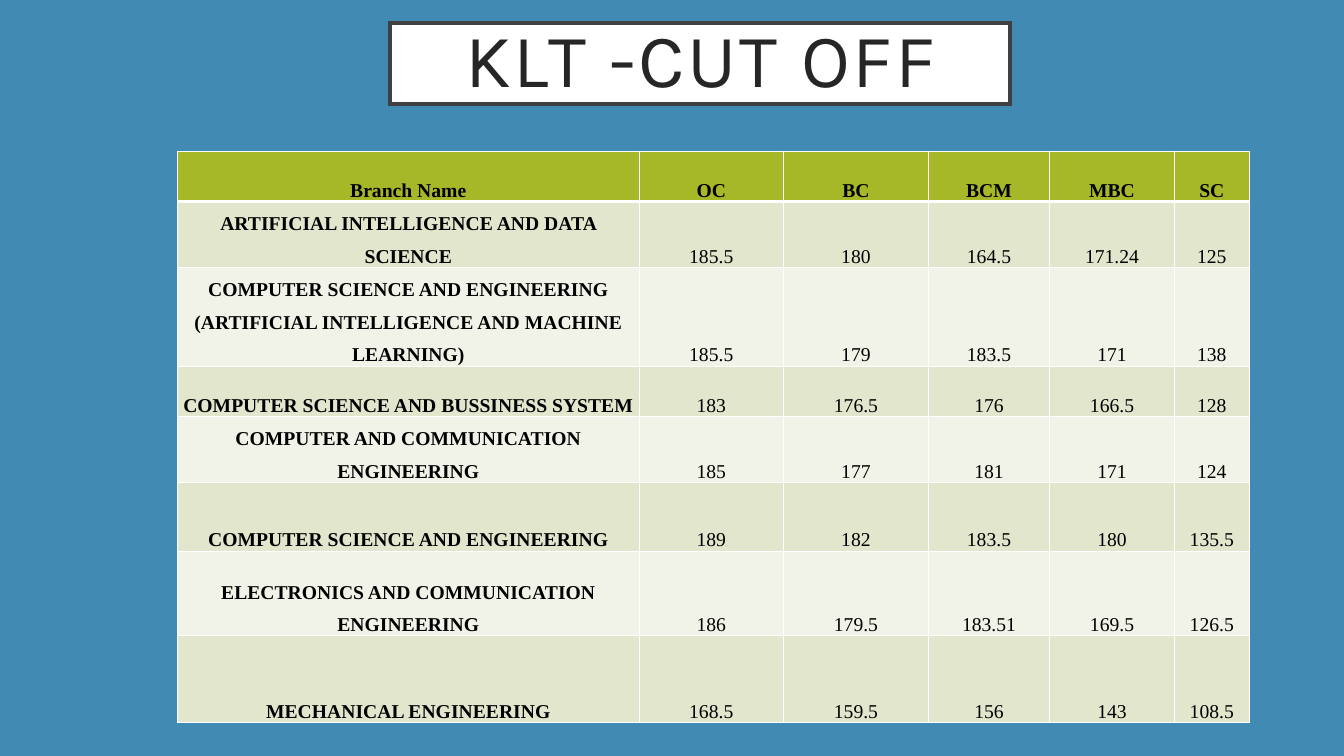
from lxml import etree
from pptx import Presentation
from pptx import util as u
from pptx.dml.color import RGBColor
from pptx.enum import text
from pptx.oxml.ns import qn

COLORS = {
    "background": "418AB3", "white": "FFFFFF", "frame": "404040", "title": "262626",
    "header": "A6B727", "odd": "E1E6CD", "even": "F1F3E8", "text": "000000",
}
WIDTH, HEIGHT = 13.33, 7.5
TITLE_BOX = (3.87, 0.23, 6.15, 0.8)
TABLE_BOX = (1.76, 1.5, 10.63, 5.65)
COLUMN_WIDTHS = (4.58, 1.43, 1.44, 1.2, 1.24, 0.74)
ROW_HEIGHTS = (0.5, 0.65, 0.97, 0.5, 0.65, 0.68, 0.84, 0.86)
CUT_OFFS = (
    ("Branch Name", "OC", "BC", "BCM", "MBC", "SC"),
    ("ARTIFICIAL INTELLIGENCE AND DATA SCIENCE", "185.5", "180", "164.5", "171.24", "125"),
    ("COMPUTER SCIENCE AND ENGINEERING (ARTIFICIAL INTELLIGENCE AND MACHINE LEARNING)",
     "185.5", "179", "183.5", "171", "138"),
    ("COMPUTER SCIENCE AND BUSSINESS SYSTEM", "183", "176.5", "176", "166.5", "128"),
    ("COMPUTER AND COMMUNICATION ENGINEERING", "185", "177", "181", "171", "124"),
    ("COMPUTER SCIENCE AND ENGINEERING", "189", "182", "183.5", "180", "135.5"),
    ("ELECTRONICS AND COMMUNICATION ENGINEERING", "186", "179.5", "183.51", "169.5", "126.5"),
    ("MECHANICAL ENGINEERING", "168.5", "159.5", "156", "143", "108.5"),
)


def color(name):
    """Return the named palette colour."""
    return RGBColor.from_string(COLORS[name])


def paint(fill, name):
    """Make a fill solid in a palette colour."""
    fill.solid()
    fill.fore_color.rgb = color(name)


def set_font(span, face, size, name, bold=False):
    """Format one run of text."""
    span.font.name = face
    span.font.size = u.Pt(size)
    span.font.bold = bold
    span.font.color.rgb = color(name)


def set_margins(frame, left, top, right, bottom):
    """Set the inner margins of a cell or text frame in inches."""
    frame.margin_left, frame.margin_top = u.Inches(left), u.Inches(top)
    frame.margin_right, frame.margin_bottom = u.Inches(right), u.Inches(bottom)


def set_borders(cell, top, bottom):
    """Draw white cell borders, with the given top and bottom widths in points."""
    properties = cell._tc.get_or_add_tcPr()
    sides = (("a:lnL", 1), ("a:lnR", 1), ("a:lnT", top), ("a:lnB", bottom))
    for index, (tag, points) in enumerate(sides):
        line = etree.Element(qn(tag), w=str(u.Pt(points)))
        solid = etree.SubElement(line, qn("a:solidFill"))
        etree.SubElement(solid, qn("a:srgbClr"), val=COLORS["white"])
        properties.insert(index, line)


def add_title(page, box):
    """Place the framed title in its box."""
    title = page.shapes.title
    title.left, title.top, title.width, title.height = map(u.Inches, box)
    paint(title.fill, "white")
    title.line.color.rgb = color("frame")
    title.line.width = u.Pt(3)
    etree.SubElement(title.line._get_or_add_ln(), qn("a:miter"), lim="800000")
    frame = title.text_frame
    frame.text = "KLT -CUT OFF"
    frame.word_wrap = True
    frame.auto_size = text.MSO_AUTO_SIZE.NONE
    frame.vertical_anchor = text.MSO_ANCHOR.MIDDLE
    set_margins(frame, 0.3, 0.2, 0.3, 0.2)
    para = frame.paragraphs[0]
    para.alignment = text.PP_ALIGN.CENTER
    para.line_spacing = 0.9
    span = para.runs[0]
    set_font(span, "Karla", 54, "title")
    span.font._element.set("spc", "200")


def fill_cell(cell, value, row, column):
    """Write and format one table cell."""
    cell.text = value
    cell.vertical_anchor = text.MSO_ANCHOR.BOTTOM
    set_margins(cell, 0.01, 0.01, 0.01, 0)
    paint(cell.fill, "header" if row == 0 else "odd" if row % 2 else "even")
    set_borders(cell, 3 if row == 1 else 1, 3 if row == 0 else 1)
    para = cell.text_frame.paragraphs[0]
    para.alignment = text.PP_ALIGN.CENTER
    if row and column == 0:
        para.line_spacing = 1.5
    set_font(para.runs[0], "Times New Roman", 14, "text", row == 0 or column == 0)


def add_cut_off_table(page, box):
    """Place the cut-off table in its box."""
    size = len(CUT_OFFS), len(COLUMN_WIDTHS)
    table = page.shapes.add_table(*size, *map(u.Inches, box)).table
    for column, width in zip(table.columns, COLUMN_WIDTHS):
        column.width = u.Inches(width)
    for row, height in zip(table.rows, ROW_HEIGHTS):
        row.height = u.Inches(height)
    for row, values in enumerate(CUT_OFFS):
        for column, value in enumerate(values):
            fill_cell(table.cell(row, column), value, row, column)


def main():
    """Build and save the cut-off slide."""
    deck = Presentation()
    deck.slide_width, deck.slide_height = u.Inches(WIDTH), u.Inches(HEIGHT)
    page = deck.slides.add_slide(deck.slide_layouts.get_by_name("Title Only"))
    paint(page.background.fill, "background")
    add_title(page, TITLE_BOX)
    add_cut_off_table(page, TABLE_BOX)
    deck.save("out.pptx")


if __name__ == "__main__":
    main()
